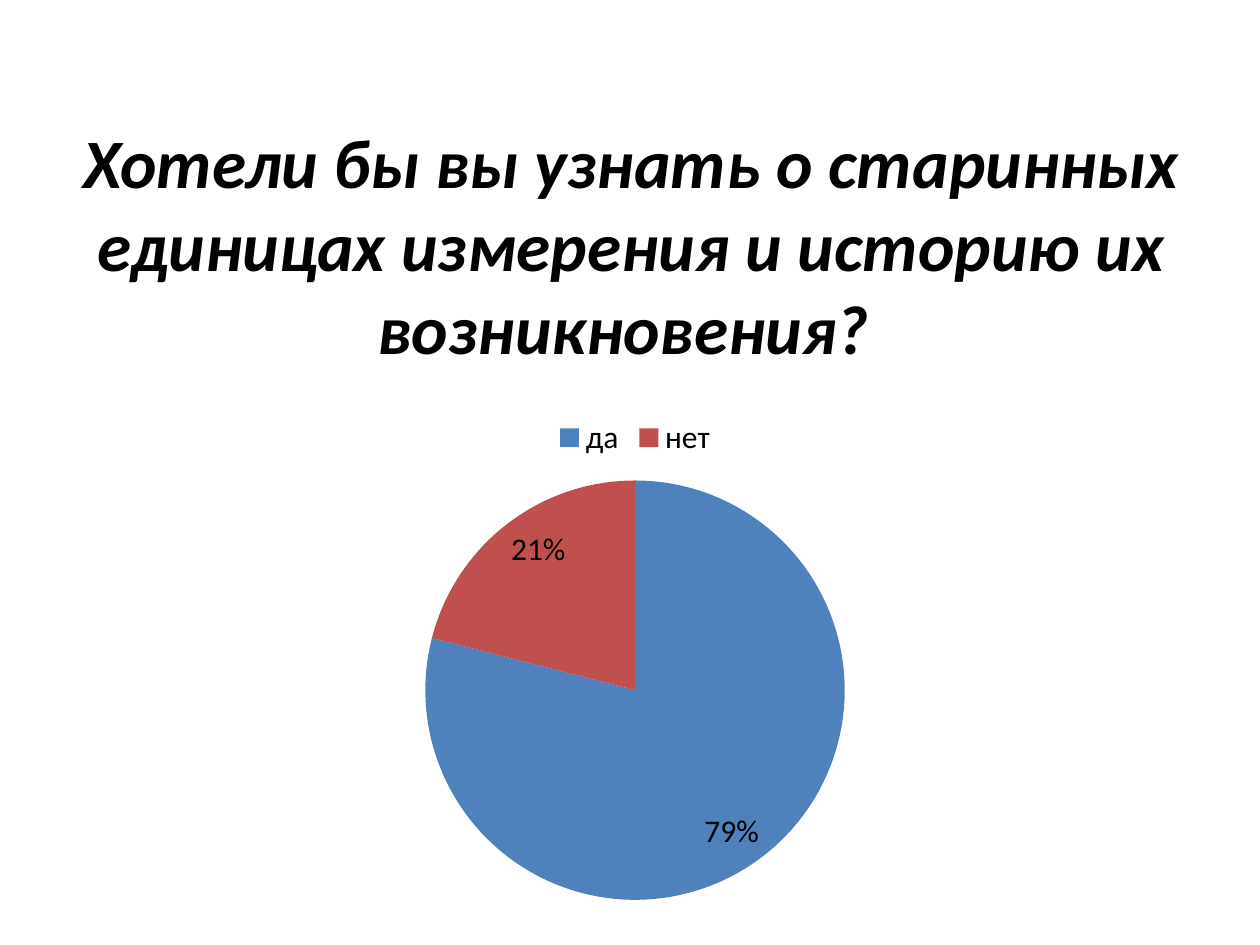
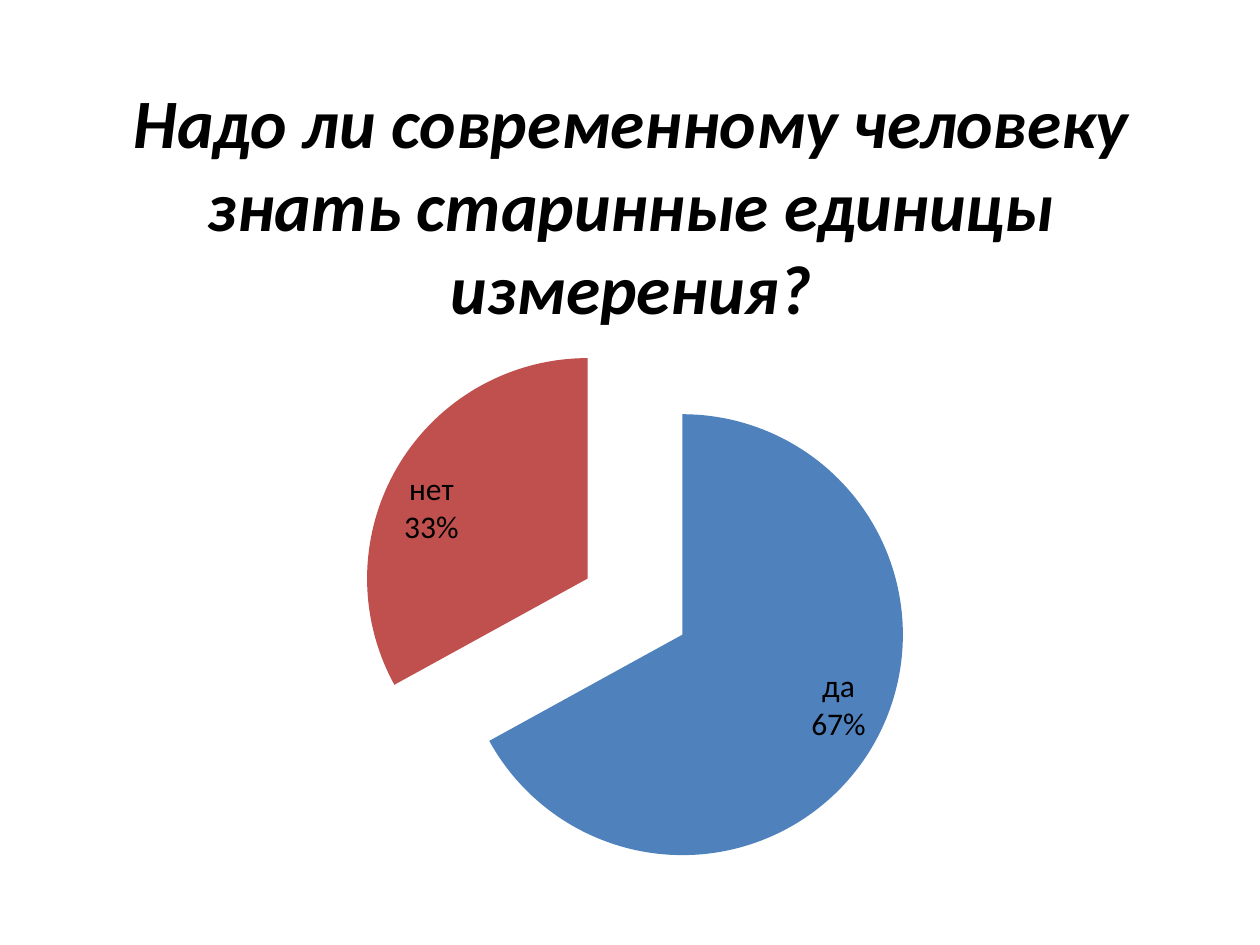
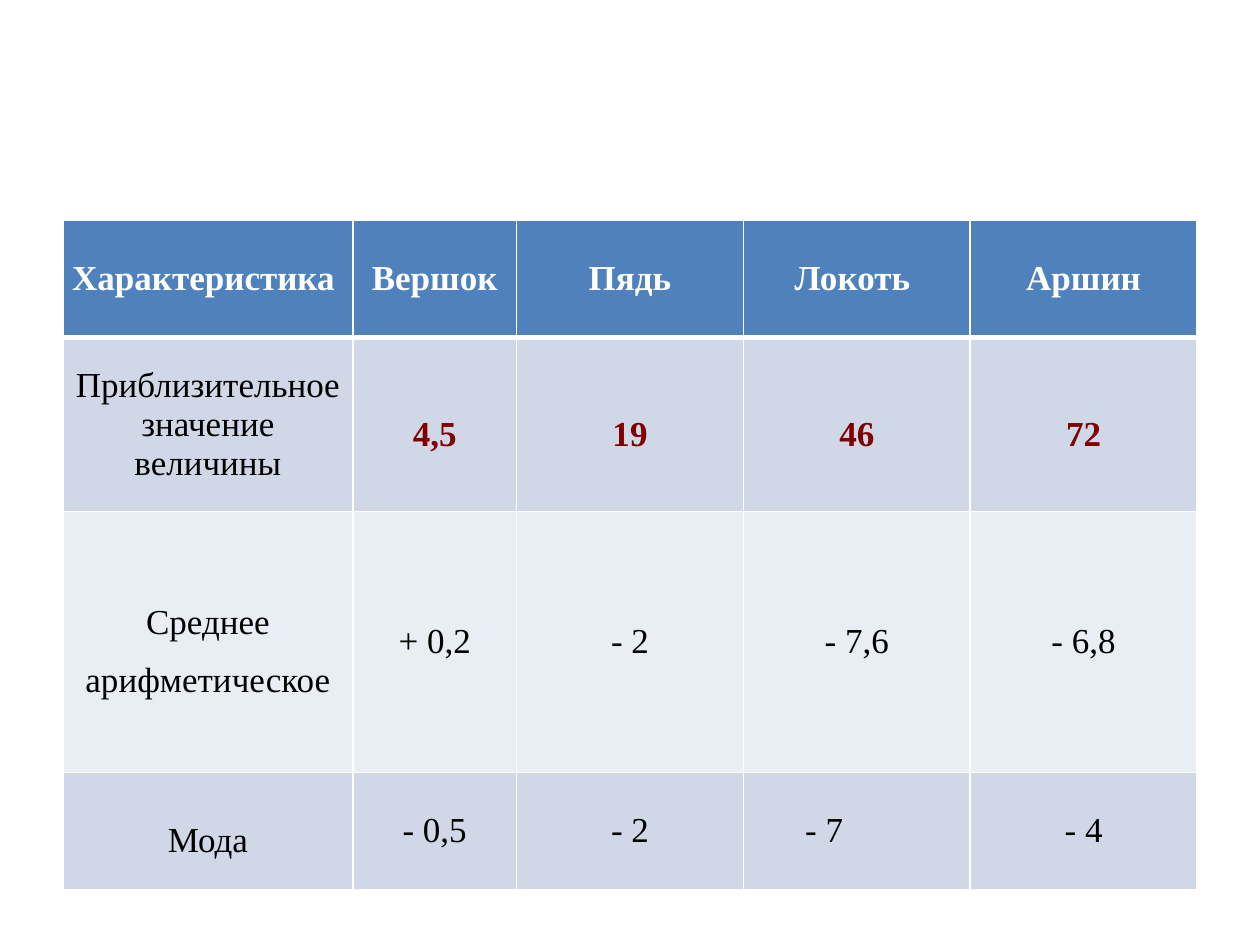
from lxml import etree
from pptx import Presentation
from pptx.chart.data import CategoryChartData
from pptx.dml.color import RGBColor
from pptx.enum.chart import XL_CHART_TYPE, XL_LABEL_POSITION, XL_LEGEND_POSITION
from pptx.enum.text import MSO_ANCHOR, PP_ALIGN
from pptx.oxml.ns import qn
from pptx.util import Inches, Pt

PIE = XL_CHART_TYPE.PIE
INSIDE_END = XL_LABEL_POSITION.INSIDE_END
LEGEND_TOP = XL_LEGEND_POSITION.TOP
MIDDLE = MSO_ANCHOR.MIDDLE
CENTER, JUSTIFY = PP_ALIGN.CENTER, PP_ALIGN.JUSTIFY

BLACK = RGBColor(0x00, 0x00, 0x00)
WHITE = RGBColor(0xFF, 0xFF, 0xFF)
BLUE = RGBColor(0x4F, 0x81, 0xBD)
RED = RGBColor(0xC0, 0x50, 0x4D)
DARK_RED = RGBColor(0x80, 0x00, 0x00)
BAND_DARK = RGBColor(0xD0, 0xD8, 0xE8)
BAND_LIGHT = RGBColor(0xE9, 0xED, 0xF4)
ROW_FILLS = [BLUE, BAND_DARK, BAND_LIGHT, BAND_DARK]

SANS, SERIF = "Calibri", "Times New Roman"
ANSWERS = ["да", "нет"]

COLUMN_WIDTHS = [2.3, 1.3, 1.8, 1.8, 1.8]
ROW_HEIGHTS = [0.93, 1.38, 2.07, 0.93]
MEASURES = [
    ["Характеристика ", "Вершок", "Пядь", "Локоть ", "Аршин"],
    ["Приблизительное значение величины", "4,5", "19", "46", "72"],
    ["Среднее арифметическое", "+ 0,2", "- 2", "- 7,6", "- 6,8"],
    ["Мода", "- 0,5", "- 2", "- 7", "- 4"],
]
SPACED_CELLS = {(1, 1), (1, 2), (1, 3), (1, 4), (2, 0), (3, 0)}
INDENTED_CELL = (3, 3)


def style_font(font, name, size, color, bold=False, italic=False):
    font.name, font.size = name, Pt(size)
    font.color.rgb = color
    font.bold, font.italic = bold, italic


def add_question(page, text, top):
    box = page.shapes.add_textbox(Inches(0.51), Inches(top), Inches(9), Inches(1.25))
    frame = box.text_frame
    frame.word_wrap = True
    frame.vertical_anchor = MIDDLE
    para = frame.paragraphs[0]
    para.text = text
    para.alignment = CENTER
    style_font(para.font, SANS, 39.6, BLACK, bold=True, italic=True)


def add_answer_pie(page, box, values, legend=False, explosion=0):
    """Draw the shares of the answers, named in a legend or in the labels."""
    data = CategoryChartData()
    data.categories = ANSWERS
    data.add_series("Series 1", values)
    chart = page.shapes.add_chart(PIE, *map(Inches, box), data).chart
    style_font(chart.font, SANS, 18, BLACK)
    chart.has_title = False
    chart.has_legend = legend
    if legend:
        chart.legend.position = LEGEND_TOP
        chart.legend.include_in_layout = False

    plot = chart.plots[0]
    plot.vary_by_categories = True
    series = plot.series[0]
    for index, color in enumerate([BLUE, RED]):
        fill = series.points[index].format.fill
        fill.solid()
        fill.fore_color.rgb = color
    if explosion:
        node = etree.Element(qn("c:explosion"), val=str(explosion))
        series._element.find(qn("c:dPt")).addprevious(node)

    plot.has_data_labels = True
    labels = plot.data_labels
    labels.show_percentage = True
    labels.show_value = False
    labels.show_category_name = not legend
    labels.position = INSIDE_END
    labels.number_format = "0%"
    labels.number_format_is_linked = False
    style_font(labels.font, SANS, 18, BLACK)


def set_borders(cell, row):
    """Rule the cell in white, with a thicker line under the header row."""
    widths = {"L": 1, "R": 1, "T": 3 if row == 1 else 1, "B": 3 if row == 0 else 1}
    properties = cell._tc.get_or_add_tcPr()
    for side, width in widths.items():
        line = etree.SubElement(properties, qn(f"a:ln{side}"), w=str(Pt(width)))
        fill = etree.SubElement(line, qn("a:solidFill"))
        etree.SubElement(fill, qn("a:srgbClr"), val=str(WHITE))


def fill_cell(cell, text, row, column):
    set_borders(cell, row)
    cell.fill.solid()
    cell.fill.fore_color.rgb = ROW_FILLS[row]
    cell.vertical_anchor = MIDDLE
    indented = (row, column) == INDENTED_CELL
    cell.margin_left = Inches(0.49 if indented else 0.07)
    cell.margin_right = Inches(0.07)
    cell.margin_top = cell.margin_bottom = 0

    para = cell.text_frame.paragraphs[0]
    para.text = text
    para.alignment = JUSTIFY if indented else CENTER
    if (row, column) in SPACED_CELLS:
        para.line_spacing = 1.5
    key_value = row == 1 and column > 0
    color = WHITE if row == 0 else DARK_RED if key_value else BLACK
    style_font(para.font, SERIF, 20, color, bold=row == 0 or key_value)


def add_measure_table(page, left, top):
    table = page.shapes.add_table(
        len(ROW_HEIGHTS), len(COLUMN_WIDTHS), Inches(left), Inches(top),
        Inches(sum(COLUMN_WIDTHS)), Inches(sum(ROW_HEIGHTS))).table
    for column, width in zip(table.columns, COLUMN_WIDTHS):
        column.width = Inches(width)
    for row, height in zip(table.rows, ROW_HEIGHTS):
        row.height = Inches(height)
    for row, texts in enumerate(MEASURES):
        for column, text in enumerate(texts):
            fill_cell(table.cell(row, column), text, row, column)


def main():
    deck = Presentation()
    deck.slide_width, deck.slide_height = Inches(10), Inches(7.5)
    blank = deck.slide_layouts[6]

    page = deck.slides.add_slide(blank)
    add_question(page, "Хотели бы вы узнать о старинных единицах измерения "
                       "и историю их возникновения? ", top=1.31)
    add_answer_pie(page, (1.14, 3.2, 7.8, 4.08), (79, 21), legend=True)

    page = deck.slides.add_slide(blank)
    add_question(page, "Надо ли современному человеку знать старинные "
                       "единицы измерения?", top=0.99)
    add_answer_pie(page, (0.59, 2.49, 8.9, 4.65), (67, 33), explosion=25)

    page = deck.slides.add_slide(blank)
    add_measure_table(page, left=0.5, top=1.75)

    deck.save("out.pptx")


if __name__ == "__main__":
    main()
